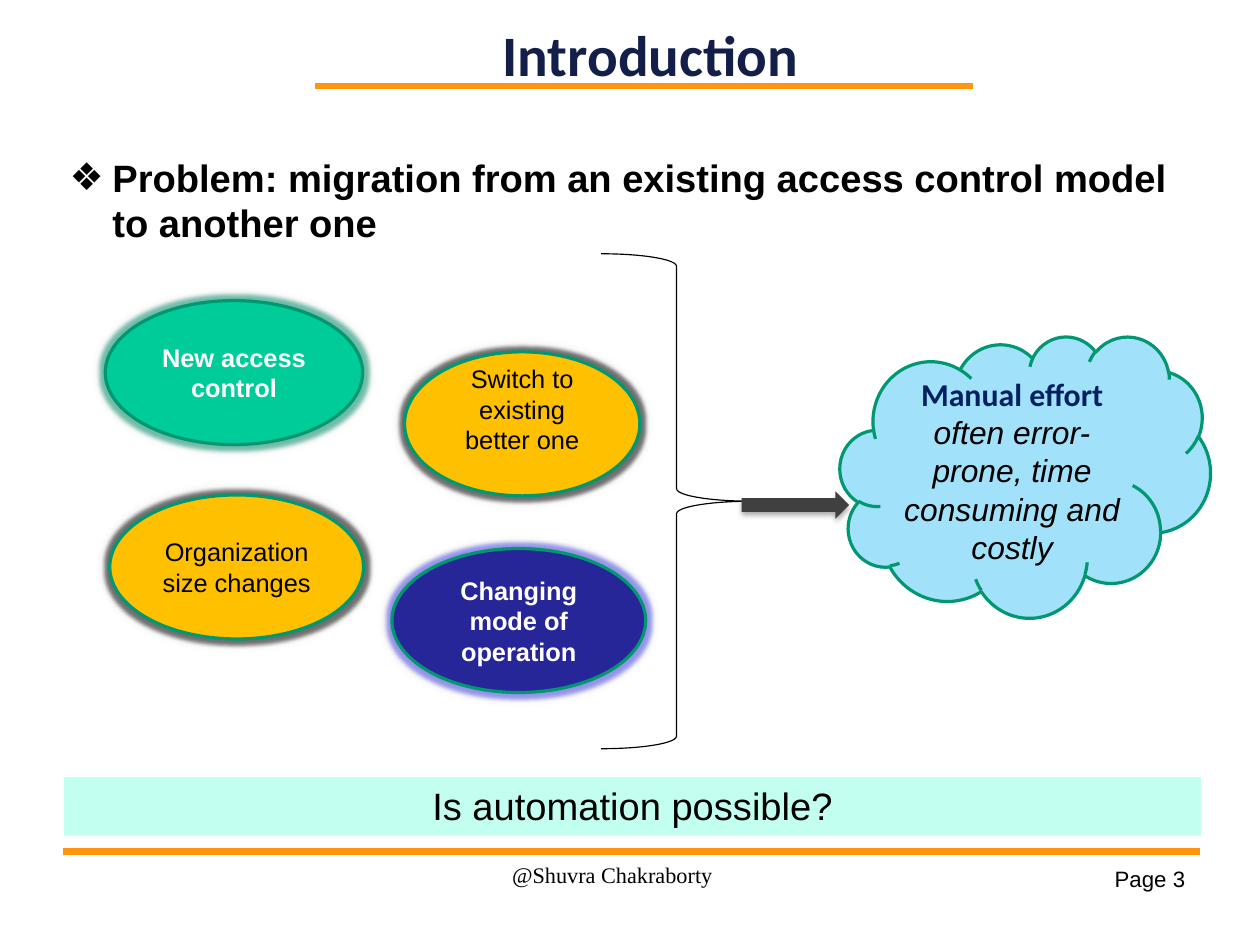
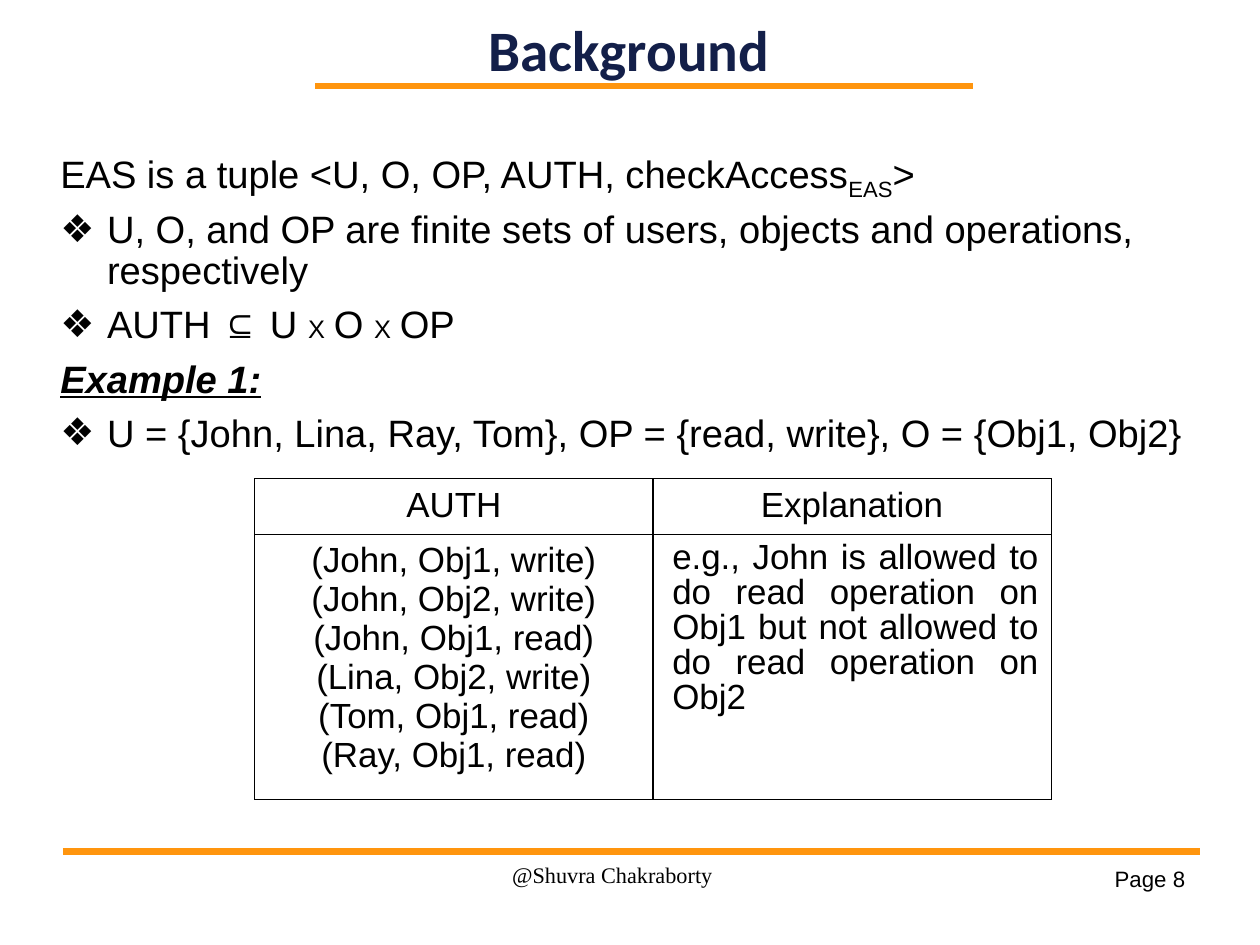
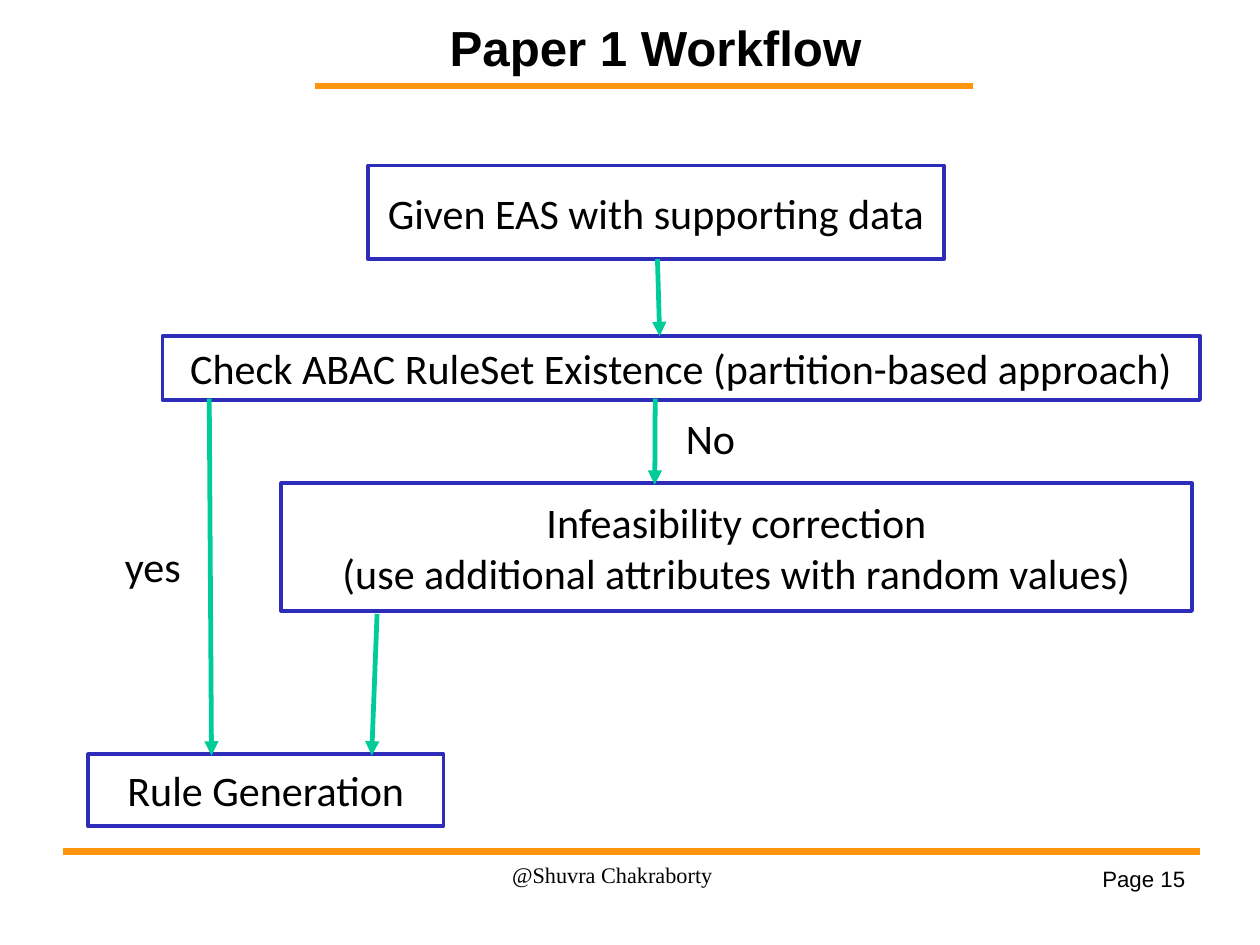
from dataclasses import dataclass
from typing import NamedTuple

from lxml.etree import SubElement
from pptx import Presentation
from pptx.dml.color import RGBColor
from pptx.enum.shapes import MSO_CONNECTOR, MSO_SHAPE as SHAPE
from pptx.enum.text import MSO_ANCHOR as ANCHOR, PP_ALIGN as ALIGN
from pptx.oxml.ns import qn
from pptx.util import Cm, Pt


@dataclass(frozen=True)
class Theme:
    """Colours, fonts and type sizes of the deck."""
    black: str = "000000"
    white: str = "FFFFFF"
    title: str = "131F49"
    navy: str = "002060"
    orange: str = "FF950E"
    teal: str = "009771"
    green: str = "00CC99"
    indigo: str = "262699"
    amber: str = "FFC000"
    sky: str = "00B0F0"
    mint: str = "C2FFF0"
    grey: str = "404040"
    frame: str = "2D2DB9"
    halo: str = "4B4BF0"
    sans: str = "Arial"
    head: str = "Calibri"
    serif: str = "Times New Roman"
    title_pt: float = 36
    workflow_title_pt: float = 31
    step_pt: float = 26.5
    body_pt: float = 24
    table_pt: float = 22
    cloud_pt: float = 20
    label_pt: float = 16
    small_pt: float = 14


T = Theme()


class Box(NamedTuple):
    """A rectangle in centimetres."""
    x: float
    y: float
    w: float
    h: float

    def inner(self, x, y, w, h):
        """Return a box placed relative to this one."""
        return Box(self.x + x, self.y + y, w, h)

    def cm(self):
        """Return the four lengths for python-pptx."""
        return [Cm(v) for v in self]


class Run(NamedTuple):
    """A piece of text with one look."""
    text: str
    size: float = T.body_pt
    font: str = T.sans
    color: str = T.black
    bold: bool = False
    italic: bool = False
    underline: bool = False
    base: int = 0


class Para(NamedTuple):
    """A paragraph made of runs."""
    runs: list
    align: ALIGN = ALIGN.LEFT
    spacing: float = 1.0
    before: float = 0
    bullet: bool = False
    indent: float = 0


def centred(text, **look):
    """Return a centred paragraph of one run."""
    return Para([Run(text, **look)], ALIGN.CENTER)


def rgb(color):
    """Return a colour object for a hex string."""
    return RGBColor.from_string(color)


def sub(parent, tag, **attrs):
    """Append a DrawingML element."""
    return SubElement(parent, qn("a:" + tag), {k: str(v) for k, v in attrs.items()})


def write(tf, paras, anchor=ANCHOR.TOP, margins=None):
    """Fill a text frame with paragraphs, run by run."""
    tf.word_wrap = True
    tf.vertical_anchor = anchor
    if margins is not None:
        tf.margin_left, tf.margin_top, tf.margin_right, tf.margin_bottom = map(Cm, margins)
    for i, para in enumerate(paras):
        p = tf.add_paragraph() if i else tf.paragraphs[0]
        pPr = p._p.get_or_add_pPr()
        if para.indent:
            pPr.set("marL", str(Cm(para.indent)))
        if para.bullet:
            pPr.set("indent", str(-Cm(para.indent)))
            sub(sub(pPr, "buClr"), "srgbClr", val=T.black)
            sub(pPr, "buFont", typeface=T.sans)
            sub(pPr, "buChar", char="❖")
        p.alignment = para.align
        p.line_spacing = para.spacing
        p.space_before = Pt(para.before if i else 0)
        for run in para.runs:
            r = p.add_run()
            r.text = run.text
            f = r.font
            f.size, f.name = Pt(run.size), run.font
            f.bold, f.italic, f.underline = run.bold, run.italic, run.underline
            f.color.rgb = rgb(run.color)
            if run.base:
                r._r.get_or_add_rPr().set("baseline", str(run.base * 1000))


def add_text(s, box, paras, **frame):
    """Add a text box."""
    write(s.shapes.add_textbox(*box.cm()).text_frame, paras, **frame)


def add_shape(s, kind, box, fill=None, line=None, width=2, paras=(), **frame):
    """Add a preset shape with its fill, outline and text."""
    sp = s.shapes.add_shape(kind, *box.cm())
    sp.shadow.inherit = False
    if fill:
        sp.fill.solid()
        sp.fill.fore_color.rgb = rgb(fill)
    else:
        sp.fill.background()
    if line:
        sp.line.color.rgb = rgb(line)
        sp.line.width = Pt(width)
    else:
        sp.line.fill.background()
    write(sp.text_frame, paras, **frame)
    return sp


def add_alpha(parent, color, percent):
    """Append a colour with an opacity."""
    sub(sub(parent, "srgbClr", val=color), "alpha", val=percent * 1000)


def add_shadow(sp, blur, dist, angle, percent):
    """Give a shape a soft black shadow."""
    effects = sp.element.spPr.find(qn("a:effectLst"))
    shadow = sub(effects, "outerShdw", blurRad=Pt(blur), dist=Pt(dist),
                 dir=angle * 60000, algn="ctr", rotWithShape=0)
    add_alpha(shadow, T.black, percent)


def add_glow(sp, color):
    """Give a shape a coloured halo."""
    glow = sub(sp.element.spPr.find(qn("a:effectLst")), "glow", rad=Pt(5))
    add_alpha(glow, color, 50)


def add_line(s, start, end, color, width, arrow=False):
    """Add a straight line, with an arrowhead if asked."""
    c = s.shapes.add_connector(MSO_CONNECTOR.STRAIGHT, *map(Cm, (*start, *end)))
    c.line.color.rgb = rgb(color)
    c.line.width = Pt(width)
    if arrow:
        sub(c.line._get_or_add_ln(), "tailEnd", type="triangle")
    sub(c.element.spPr, "effectLst")


def add_frame(prs, page):
    """Add a slide with the rules, footer and page number they all share."""
    s = prs.slides.add_slide(prs.slide_layouts[6])
    add_line(s, (7.01, 1.91), (21.62, 1.91), T.orange, 4.31)
    add_line(s, (1.4, 18.92), (26.67, 18.92), T.orange, 4.31)
    add_text(s, Box(21.79, 19.1, 4.8, 1.07),
             [Para([Run(f"Page {page}", T.small_pt)], ALIGN.RIGHT)])
    add_text(s, Box(11.38, 19.13, 6.5, 1.42),
             [Para([Run("@Shuvra Chakraborty", T.small_pt, T.serif)], spacing=1.01)],
             margins=(0, 0, 0, 0))
    return s


def add_title(s, box, text):
    """Add the large dark blue title."""
    add_text(s, box, [centred(text, size=T.title_pt, font=T.head, color=T.title, bold=True)],
             anchor=ANCHOR.MIDDLE, margins=(0, 0, 0, 0))


def add_reasons(s, box):
    """Add the four ovals and the brace that gathers them."""
    ovals = [
        ("New access control", (0, 1.04, 5.72), T.green, T.white, T.teal),
        ("Changing mode of operation", (6.37, 6.55, 5.64), T.indigo, T.white, T.halo),
        ("Organization size changes", (0.1, 5.36, 5.64), T.amber, T.black, T.black),
        ("Switch to existing better one", (6.65, 2.18, 5.23), T.amber, T.black, T.black),
    ]
    for text, (x, y, w), fill, ink, halo in ovals:
        bottom = 0.78 if text.startswith("Switch") else 0.13
        label = centred(text, size=T.label_pt, color=ink, bold=ink == T.white)
        sp = add_shape(s, SHAPE.OVAL, box.inner(x, y, w, 3.2), fill, T.teal, paras=[label],
                       anchor=ANCHOR.MIDDLE, margins=(0.25, 0.13, 0.25, bottom))
        add_glow(sp, halo)
        add_shadow(sp, 6, 0, 315, 20)
    brace = add_shape(s, SHAPE.RIGHT_BRACE, box.inner(11.02, 0, 3.35, 11),
                      line=T.black, width=0.75)
    brace.adjustments[0] = 0.083


def add_outcome(s, box):
    """Add the arrow and the cloud it points to."""
    cloud = add_shape(
        s, SHAPE.CLOUD, box.inner(2.19, 0, 8.23, 6.25), T.sky, T.teal,
        paras=[centred("Manual effort", size=T.cloud_pt, font=T.head, color=T.navy, bold=True),
               centred("often error-prone, time consuming and costly",
                       size=T.cloud_pt, italic=True)],
        anchor=ANCHOR.MIDDLE)
    color = cloud.element.spPr.find(qn("a:solidFill")).find(qn("a:srgbClr"))
    sub(color, "alpha", val=37000)
    arrow = add_shape(s, SHAPE.RIGHT_ARROW, box.inner(0, 3.45, 2.39, 0.61), T.grey)
    add_shadow(arrow, 3.5, 2.2, 90, 32)


def introduction(prs):
    """Build the slide on the migration problem."""
    s = add_frame(prs, 3)
    add_title(s, Box(7.24, 0.23, 14.43, 1.91), "Introduction")
    problem = Run("Problem: migration from an existing access control model to another one",
                  bold=True)
    add_text(s, Box(1.3, 3.3, 25.4, 2.31), [Para([problem], bullet=True, indent=0.95)])
    add_reasons(s, Box(2.34, 5.64, 14.37, 11))
    add_outcome(s, Box(16.48, 7.47, 10.42, 6.25))
    add_shape(s, SHAPE.RECTANGLE, Box(1.42, 17.27, 25.27, 1.3), T.mint,
              paras=[centred("Is automation possible?")])


def add_definitions(s, box):
    """Add the definition of the tuple and the example sets."""
    cross = [Run("X", T.label_pt), Run(" ", T.cloud_pt)]
    lines = [
        (False, [Run("EAS is a tuple <U, O, OP, AUTH, checkAccess"),
                 Run("EAS", base=-25), Run(">")]),
        (True, [Run("U, O, and OP are finite sets of users, objects and operations, "
                    "respectively")]),
        (True, [Run("AUTH ⊆ U "), *cross, Run("O "), *cross, Run("OP")]),
        (False, [Run("Example 1:", bold=True, italic=True, underline=True)]),
        (True, [Run("U = {John, Lina, Ray, Tom}, OP = {read, write}, O = {Obj1, Obj2}")]),
    ]
    add_text(s, box, [Para(runs, spacing=0.9, before=8.2, bullet=bullet,
                           indent=1.04 if bullet else 0) for bullet, runs in lines])


def add_borders(cell):
    """Draw the four thin borders of a cell."""
    tcPr = cell._tc.get_or_add_tcPr()
    for i, side in enumerate(("lnL", "lnR", "lnT", "lnB")):
        ln = tcPr.makeelement(qn("a:" + side), {"w": str(Pt(0.96))})
        sub(sub(ln, "solidFill"), "srgbClr", val=T.black)
        tcPr.insert(i, ln)


def add_auth_table(s, box):
    """Add the table of authorizations."""
    grants = ["(John, Obj1, write)", "(John, Obj2, write)", "(John, Obj1, read)",
              "(Lina, Obj2, write)", "(Tom, Obj1, read)", "(Ray, Obj1, read)"]
    note = Run("e.g., John is allowed to do read operation on Obj1 "
               "but not allowed to do read operation on Obj2", T.table_pt)
    rows = [
        [[centred(name, size=T.table_pt)] for name in ("AUTH", "Explanation")],
        [[centred(grant, size=T.table_pt) for grant in grants],
         [Para([note], ALIGN.JUSTIFY, 0.9, indent=0.15)]],
    ]
    table = s.shapes.add_table(2, 2, *box.cm()).table
    table.first_row = table.horz_banding = False
    for row, height in zip(table.rows, (1.22, box.h - 1.22)):
        row.height = Cm(height)
    for col in table.columns:
        col.width = Cm(box.w / 2)
    for i, row in enumerate(rows):
        for j, paras in enumerate(row):
            cell = table.cell(i, j)
            cell.fill.background()
            cell.margin_left = cell.margin_right = Cm(0.28)
            cell.margin_top = cell.margin_bottom = Cm(0.15)
            write(cell.text_frame, paras)
            add_borders(cell)


def background(prs):
    """Build the slide with definitions and an example."""
    s = add_frame(prs, 8)
    add_title(s, Box(6.76, 0.13, 14.43, 1.91), "Background")
    add_definitions(s, Box(1.09, 3.23, 25.88, 15.67))
    add_auth_table(s, Box(5.66, 10.64, 17.7, 7.11))


def add_flow(s, box):
    """Add the steps of the workflow, their labels and arrows."""
    steps = [
        (["Given EAS with supporting data"], (6.22, 0, 12.8, 2.08), T.frame),
        (["Check ABAC RuleSet Existence (partition-based approach)"],
         (1.65, 3.79, 23.06, 1.42), T.frame),
        (["Infeasibility correction", "(use additional attributes with random values)"],
         (4.29, 7.06, 20.24, 2.84), T.frame),
        (["Rule Generation"], (0, 13.08, 7.9, 1.6), T.frame),
        (["yes"], (0.43, 8.33, 2.01, 1.14), T.white),
        (["No"], (12.98, 5.39, 1.7, 1.3), T.white),
    ]
    for lines, place, line in steps:
        add_shape(s, SHAPE.RECTANGLE, box.inner(*place), T.white, line, 2.25,
                  [centred(text, size=T.step_pt, font=T.head) for text in lines],
                  anchor=ANCHOR.MIDDLE)
    arrows = [
        ((12.65, 2.08), (12.7, 3.79)),
        ((2.69, 5.18), (2.74, 13.11)),
        ((12.6, 5.18), (12.59, 7.09)),
        ((6.42, 9.96), (6.3, 13.11)),
    ]
    for start, end in arrows:
        ends = [(box.x + x, box.y + y) for x, y in (start, end)]
        add_line(s, *ends, T.green, 3, arrow=True)


def workflow(prs):
    """Build the slide with the workflow chart."""
    s = add_frame(prs, 15)
    title = Run("Paper 1 Workflow", T.workflow_title_pt, bold=True)
    add_text(s, Box(7.01, 0.43, 15.11, 1.42), [Para([title], ALIGN.CENTER, 0.9)],
             anchor=ANCHOR.BOTTOM)
    add_flow(s, Box(1.96, 3.68, 24.71, 14.68))


def main():
    """Build and save the deck."""
    prs = Presentation()
    prs.slide_width, prs.slide_height = Cm(28), Cm(21)
    for build in (introduction, background, workflow):
        build(prs)
    prs.save("out.pptx")


if __name__ == "__main__":
    main()
